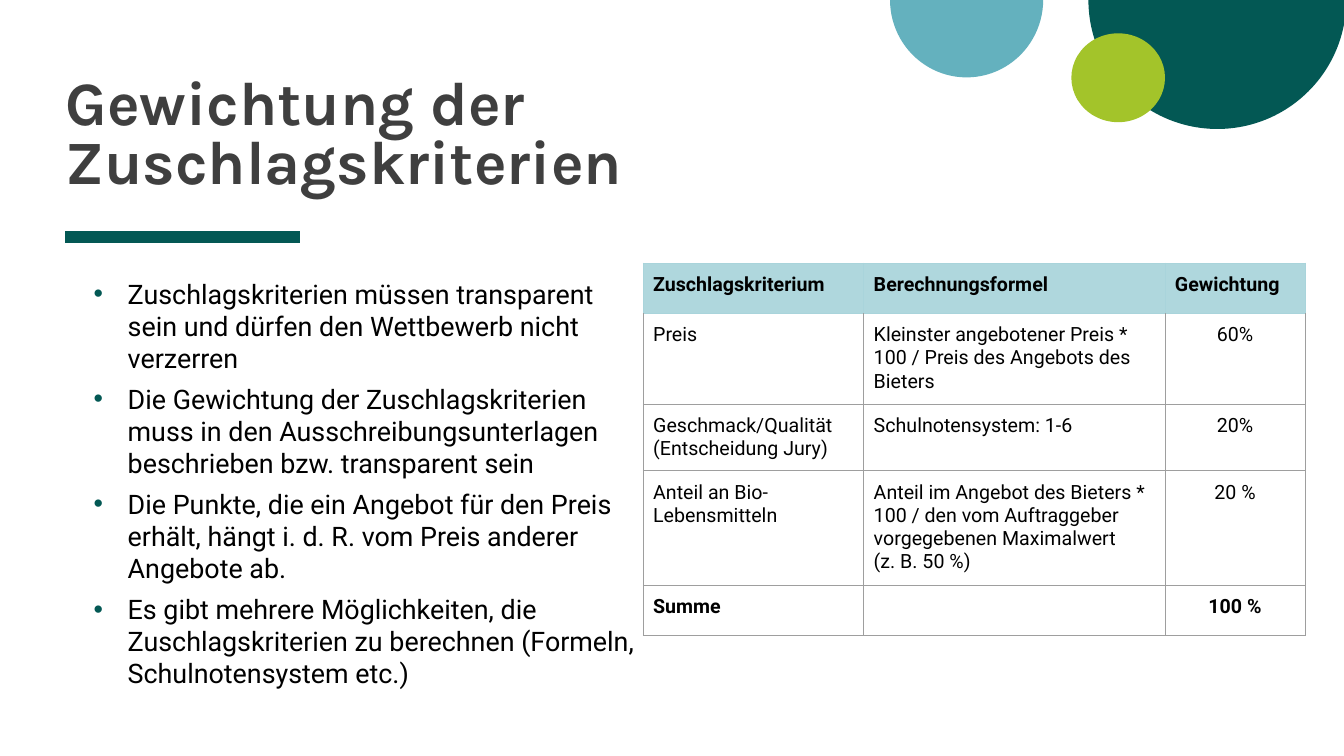
from lxml.etree import SubElement
from pptx import Presentation
from pptx.dml.color import RGBColor
from pptx.enum.shapes import MSO_CONNECTOR, MSO_SHAPE
from pptx.enum.text import MSO_ANCHOR, PP_ALIGN
from pptx.oxml.ns import qn
from pptx.util import Cm, Pt

GREEN, BLACK, GREY, HEADER_LINE = "035854", "000000", "9E9E9E", "A9D4DB"


def color(value):
    return RGBColor.from_string(value)


def set_font(paragraph, name, size, value, bold=False):
    font = paragraph.font
    font.name, font.size, font.bold = name, Pt(size), bold
    font.color.rgb = color(value)


presentation = Presentation()
presentation.slide_width, presentation.slide_height = Cm(33.87), Cm(19.05)
slide = presentation.slides.add_slide(presentation.slide_layouts[6])

# Half circles at the top edge and the small circle in front
circles = [
    (MSO_SHAPE.PIE, 27.43, -3.25, 6.5, 6.5, GREEN),
    (MSO_SHAPE.PIE, 22.43, -1.96, 3.86, 3.91, "64B1BE"),
    (MSO_SHAPE.OVAL, 27, 0.84, 2.36, 2.24, "A3C42A"),
]
for kind, left, top, width, height, fill in circles:
    circle = slide.shapes.add_shape(kind, Cm(left), Cm(top), Cm(width), Cm(height))
    if kind == MSO_SHAPE.PIE:
        circle.adjustments[0], circle.adjustments[1] = 0, 108
    circle.shadow.inherit = False
    circle.fill.solid()
    circle.fill.fore_color.rgb = color(fill)
    circle.line.fill.background()

# Rule under the title
rule = slide.shapes.add_connector(MSO_CONNECTOR.STRAIGHT, Cm(1.65), Cm(5.97), Cm(7.57), Cm(5.97))
rule.line.color.rgb = color(GREEN)
rule.line.width = Pt(8)
SubElement(rule._element.spPr, qn("a:effectLst"))

# Title
title = slide.shapes.add_textbox(Cm(1.65), Cm(0.53), Cm(18.85), Cm(4.42)).text_frame
title.word_wrap = True
title.vertical_anchor = MSO_ANCHOR.BOTTOM
title.margin_left = title.margin_top = title.margin_right = title.margin_bottom = 0
title.text = "Gewichtung der Zuschlagskriterien"
title.paragraphs[0].line_spacing = 0.8
set_font(title.paragraphs[0], "Karla", 44, "3F3F3F", True)

# Bullet list
points = [
    "Zuschlagskriterien müssen transparent sein und dürfen den Wettbewerb nicht verzerren",
    "Die Gewichtung der Zuschlagskriterien muss in den Ausschreibungsunterlagen beschrieben "
    "bzw. transparent sein",
    "Die Punkte, die ein Angebot für den Preis erhält, hängt i. d. R. vom Preis anderer "
    "Angebote ab.",
    "Es gibt mehrere Möglichkeiten, die Zuschlagskriterien zu berechnen (Formeln, "
    "Schulnotensystem etc.)",
]
body = slide.shapes.add_textbox(Cm(1.65), Cm(6.35), Cm(14.55), Cm(11.91)).text_frame
body.word_wrap = True
body.margin_left = body.margin_right = body.margin_bottom = 0
body.margin_top = Cm(0.64)
for index, point in enumerate(points):
    paragraph = body.add_paragraph() if index else body.paragraphs[0]
    paragraph.text = point
    properties = paragraph._p.get_or_add_pPr()
    properties.set("marL", str(Cm(1.57)))
    properties.set("indent", str(Cm(-0.86)))
    bullet_color = SubElement(properties, qn("a:buClr"))
    SubElement(bullet_color, qn("a:srgbClr"), val=GREEN)
    SubElement(properties, qn("a:buFont"), typeface="Arial")
    SubElement(properties, qn("a:buChar"), char="•")
    paragraph.space_before = Pt(6 if index else 0)
    set_font(paragraph, "Roboto", 19.2, BLACK)

# Table of criteria
rows = [
    ("Zuschlagskriterium", "Berechnungsformel", "Gewichtung"),
    ("Preis", "Kleinster angebotener Preis * 100 / Preis des Angebots des Bieters", "60%"),
    ("Geschmack/Qualität (Entscheidung Jury)", "Schulnotensystem: 1-6", "20%"),
    ("Anteil an Bio-Lebensmitteln",
     "Anteil im Angebot des Bieters * 100 / den vom Auftraggeber vorgegebenen "
     "Maximalwert \v(z. B. 50 %)", "20 %"),
    ("Summe", "", "100 %"),
]
column_widths = [5.56, 7.59, 3.53]
row_heights = [1.27, 2.26, 1.68, 2.84, 1.27]
table = slide.shapes.add_table(len(rows), 3, Cm(16.21), Cm(6.63), Cm(sum(column_widths)),
                               Cm(sum(row_heights))).table
table.first_row = table.horz_banding = False
for column, width in zip(table.columns, column_widths):
    column.width = Cm(width)
for row, height in zip(table.rows, row_heights):
    row.height = Cm(height)

for row_index, texts in enumerate(rows):
    is_header = row_index == 0
    for column_index, text in enumerate(texts):
        cell = table.cell(row_index, column_index)
        cell.margin_left = cell.margin_right = cell.margin_top = cell.margin_bottom = Cm(0.25)
        cell.text = text
        paragraph = cell.text_frame.paragraphs[0]
        if column_index == 2 and not is_header:
            paragraph.alignment = PP_ALIGN.CENTER
        set_font(paragraph, "Roboto", 14, BLACK, row_index in (0, len(rows) - 1))

        # Borders come before the fill in the cell properties
        cell_properties = cell._tc.get_or_add_tcPr()
        for side in ("lnL", "lnR", "lnT", "lnB"):
            border = SubElement(cell_properties, qn(f"a:{side}"), w=str(Pt(0.75)))
            header_edge = is_header or (row_index == 1 and side == "lnT")
            line_fill = SubElement(border, qn("a:solidFill"))
            SubElement(line_fill, qn("a:srgbClr"), val=HEADER_LINE if header_edge else GREY)
        if is_header:
            cell.fill.solid()
            cell.fill.fore_color.rgb = color("AFD7DD")
        else:
            cell.fill.background()

presentation.save("out.pptx")
